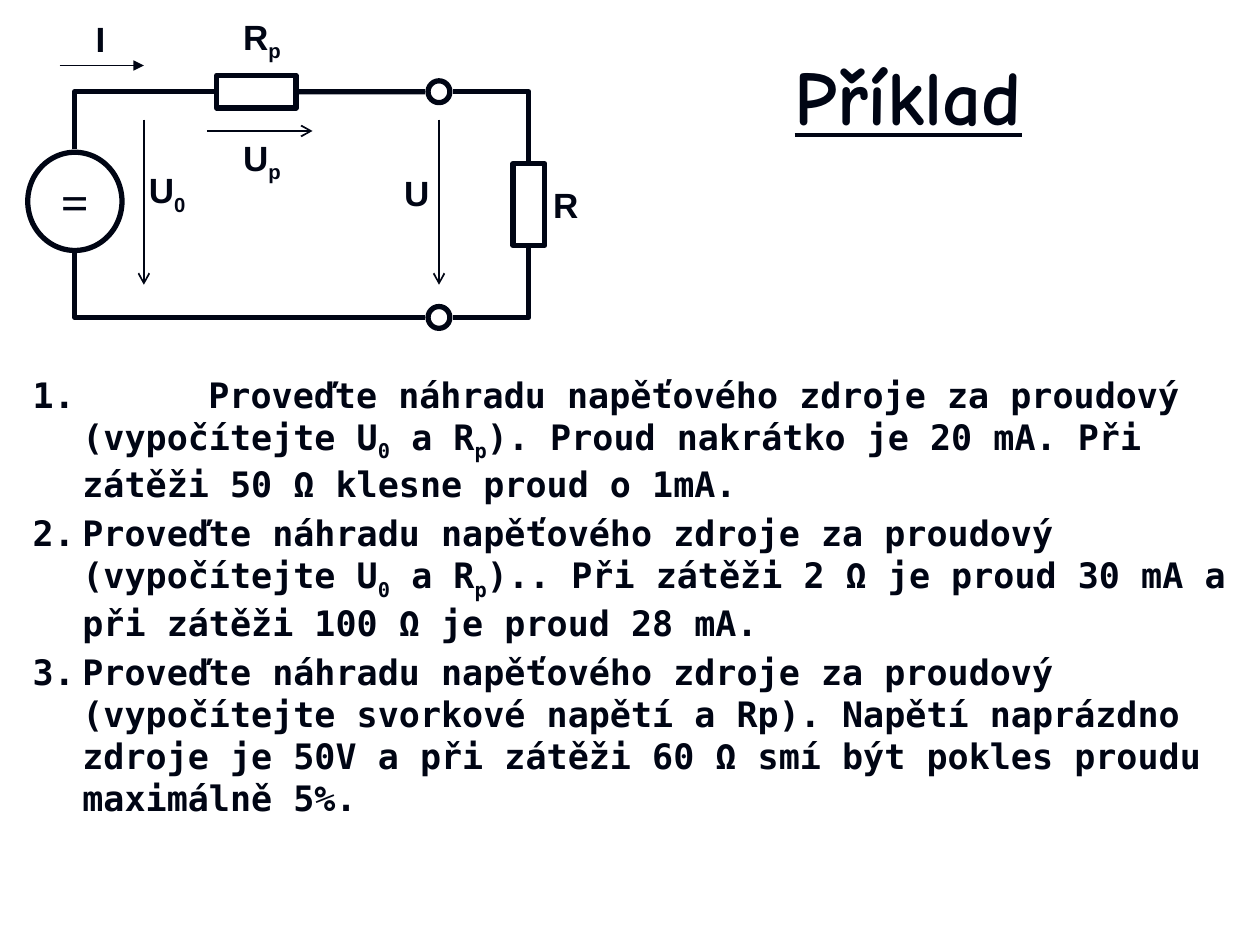
from pptx import Presentation
from pptx.dml.color import RGBColor
from pptx.enum import shapes as kinds, text as txt
from pptx.oxml.ns import qn
from pptx.util import Cm, Pt

INK = "000514"
TASKS = [
    "1. \tProveďte náhradu napěťového zdroje za proudový (vypočítejte U_0 a R_p). "
    "Proud nakrátko je 20 mA. Při zátěži 50 Ω klesne proud o 1mA.",
    "2.\tProveďte náhradu napěťového zdroje za proudový (vypočítejte U_0 a R_p).. "
    "Při zátěži 2 Ω je proud 30 mA a při zátěži 100 Ω je proud 28 mA.",
    "3.\tProveďte náhradu napěťového zdroje za proudový (vypočítejte svorkové napětí a Rp). "
    "Napětí naprázdno zdroje je 50V a při zátěži 60 Ω smí být pokles proudu maximálně 5%.",
]


def colour(hex_code):
    return RGBColor.from_string(hex_code)


def write(paragraph, content, font="Arial", size=20, underline=None, align=None):
    """Add bold text; the character after each underscore becomes a subscript."""
    paragraph.alignment = align
    first, *rest = content.split("_")
    pieces = [(first, False)]
    for part in rest:
        pieces += [(part[0], True), (part[1:], False)]
    for piece, is_subscript in pieces:
        if not piece:
            continue
        run = paragraph.add_run()
        run.text = piece
        run.font.name, run.font.size = font, Pt(size)
        run.font.bold, run.font.underline = True, underline
        run.font.color.rgb = colour(INK)
        if is_subscript:
            run.font._element.set("baseline", "-25000")


def place(shape, left, top, width, height):
    shape.left, shape.top = Cm(left), Cm(top)
    shape.width, shape.height = Cm(width), Cm(height)


def set_insets(frame, inset):
    frame.margin_left = frame.margin_right = Cm(inset)
    frame.margin_top = frame.margin_bottom = Cm(inset)


def outline(shape, width=3):
    shape.shadow.inherit = False
    shape.fill.background()
    shape.line.color.rgb = colour(INK)
    shape.line.width = Pt(width)
    return shape


def add_heading(title, *box):
    place(title, *box)
    title.text_frame.vertical_anchor = txt.MSO_ANCHOR.MIDDLE
    write(title.text_frame.paragraphs[0], "Příklad", font="Comic Neue", size=44,
          underline=True, align=txt.PP_ALIGN.CENTER)


def add_tasks(body, *box):
    place(body, *box)
    frame = body.text_frame
    frame.auto_size = txt.MSO_AUTO_SIZE.NONE
    set_insets(frame, 0.1)
    for number, task in enumerate(TASKS):
        paragraph = frame.add_paragraph() if number else frame.paragraphs[0]
        paragraph.space_before = Pt(4)
        write(paragraph, task, font="DejaVu Sans Mono", align=txt.PP_ALIGN.LEFT)
        properties = paragraph._p.get_or_add_pPr()
        properties.set("marL", str(Cm(1)))
        properties.set("indent", str(-Cm(1)))
        properties.set("defTabSz", str(Cm(2.54)))
        properties.append(properties.makeelement(qn("a:buNone"), {}))


def add_circuit(slide, left, top):
    """Voltage source with inner resistance R_p and load R; lengths in cm."""
    drawing = slide.shapes
    upper, lower = 1.65, 6.2
    source_x, terminal_x, load_x = 0.95, 8.29, 10.1
    source_top, source_bottom = 2.87, 4.85
    load_top, load_bottom = 3.1, 4.75
    gap, radius = 0.06, 0.22

    def at(x, y):
        return Cm(left + x), Cm(top + y)

    def part(kind, x, y, width, height):
        return outline(drawing.add_shape(kind, *at(x, y), Cm(width), Cm(height)))

    def wire(*points):
        start, *others = [at(*point) for point in points]
        builder = drawing.build_freeform(*start)
        builder.add_line_segments(others, close=False)
        outline(builder.convert_to_shape())

    def line(start, end, width, head=None):
        connector = drawing.add_connector(kinds.MSO_CONNECTOR.STRAIGHT,
                                          *at(*start), *at(*end))
        connector.line.color.rgb = colour(INK)
        connector.line.width = Pt(width)
        if head:
            stroke = connector.line._get_or_add_ln()
            stroke.append(stroke.makeelement(qn("a:tailEnd"), {"type": head}))
        properties = connector._element.spPr
        properties.append(properties.makeelement(qn("a:effectLst"), {}))
        return connector

    def label(content, x, y, width):
        frame = drawing.add_textbox(*at(x, y), Cm(width), Cm(1.17)).text_frame
        frame.word_wrap = False
        frame.vertical_anchor = txt.MSO_ANCHOR.MIDDLE
        set_insets(frame, 0.1)
        write(frame.paragraphs[0], content)

    oval, box = kinds.MSO_SHAPE.OVAL, kinds.MSO_SHAPE.RECTANGLE
    source = part(oval, 0, source_top, 1.9, source_bottom - source_top)
    source.text_frame.word_wrap = False
    source.text_frame.vertical_anchor = txt.MSO_ANCHOR.MIDDLE
    write(source.text_frame.paragraphs[0], "=", font="Times New Roman", size=28,
          align=txt.PP_ALIGN.CENTER)
    for y in (upper, lower):
        part(oval, terminal_x - radius, y - radius, 2 * radius, 2 * radius)
    inner_resistor = part(box, 3.81, upper - 0.33, 1.6, 0.66)
    part(box, load_x - 0.32, load_top, 0.64, load_bottom - load_top)

    before, after = terminal_x - radius - gap, terminal_x + radius + gap
    wire((source_x, source_top - gap), (source_x, upper), (3.81 - gap, upper))
    wire((source_x, source_bottom + gap), (source_x, lower), (before, lower))
    wire((after, upper), (load_x, upper), (load_x, load_top - gap))
    wire((load_x, load_bottom + gap), (load_x, lower), (after, lower))
    line((5.41, upper), (before, upper), 3).begin_connect(inner_resistor, 3)

    line((0.64, 1.12), (2.34, 1.12), 1, "triangle")
    line((3.61, 2.44), (5.74, 2.44), 1, "arrow")
    for x in (2.34, terminal_x):
        line((x, 2.21), (x, 5.54), 1, "arrow")

    label("I", 1.27, 0, 0.43)
    label("R_p", 4.24, 0, 1.07)
    label("U_p", 4.24, 2.44, 1.07)
    label("U_0", 2.34, 3.1, 1.04)
    label("U", 7.49, 3.1, 0.76)
    label("R", 10.49, 3.33, 0.76)


def main():
    deck = Presentation()
    deck.slide_width, deck.slide_height = Cm(25.4), Cm(19.05)
    slide = deck.slides.add_slide(deck.slide_layouts[1])
    add_heading(slide.shapes.title, 11.71, 0.71, 13.21, 2.41)
    add_tasks(slide.placeholders[1], 0.56, 7.42, 24.35, 6.53)
    add_circuit(slide, 0.56, 0.2)
    deck.save("out.pptx")


if __name__ == "__main__":
    main()
